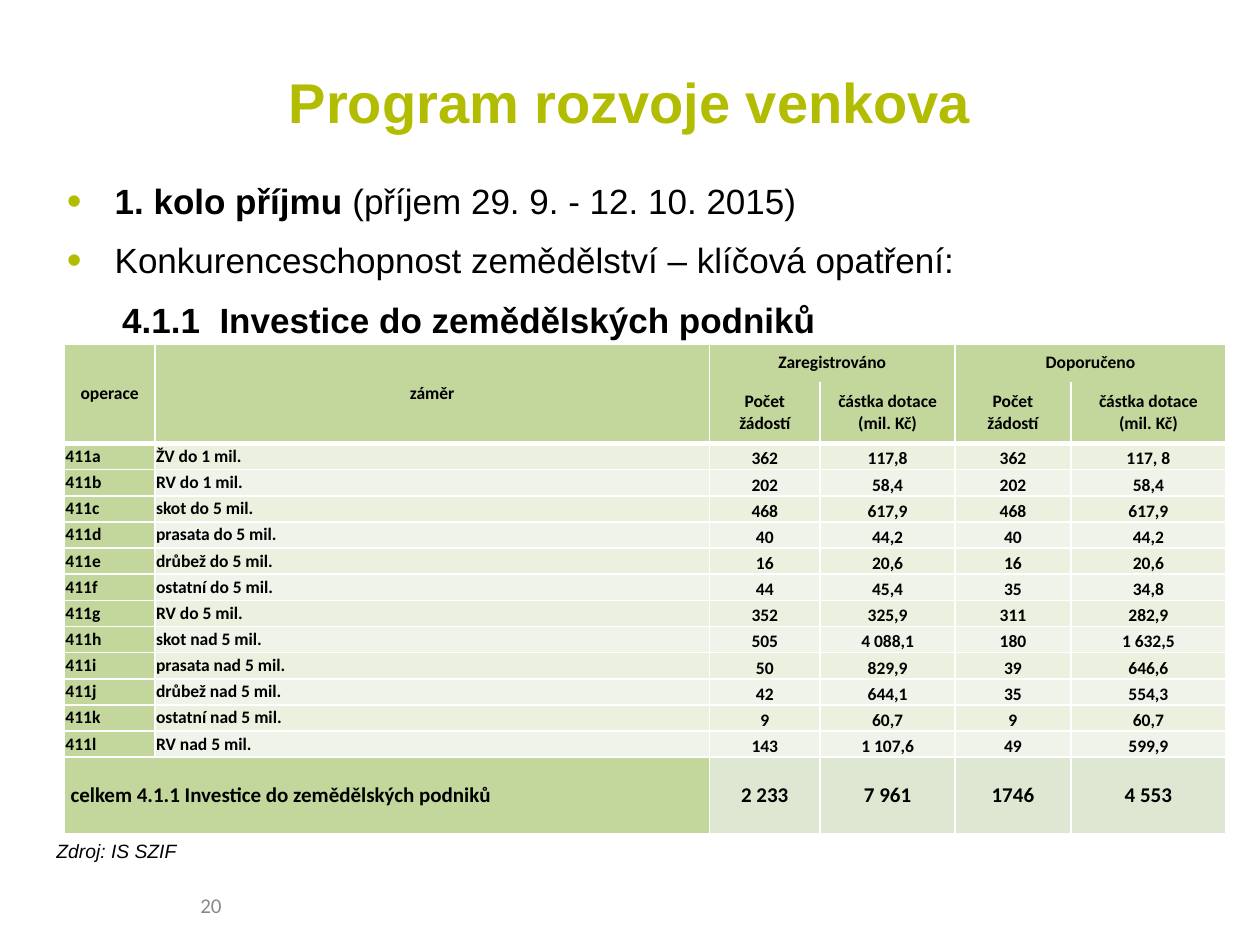
"""Build the slide on round 1 of the rural development programme."""
from dataclasses import dataclass

from lxml import etree
from pptx import Presentation
from pptx.dml.color import RGBColor
from pptx.enum.text import MSO_ANCHOR, MSO_AUTO_SIZE, PP_ALIGN
from pptx.oxml.ns import qn
from pptx.util import Inches, Pt

CENTER, LEFT, JUSTIFY = PP_ALIGN.CENTER, PP_ALIGN.LEFT, PP_ALIGN.JUSTIFY
MIDDLE, BOTTOM = MSO_ANCHOR.MIDDLE, MSO_ANCHOR.BOTTOM
NO_FIT = MSO_AUTO_SIZE.NONE


@dataclass(frozen=True)
class Theme:
    accent: str = "B2BC00"
    text: str = "000000"
    muted: str = "898989"
    border: str = "FFFFFF"
    head: str = "C3D69B"
    odd: str = "EBF1DE"
    even: str = "EFF3EA"
    total: str = "DEE7D1"
    text_font: str = "Arial"
    table_font: str = "Calibri"
    title_size: int = 32
    body_size: int = 20
    total_size: int = 12
    number_size: int = 12
    source_size: int = 11
    cell_size: int = 10


theme = Theme()


def add_run(p, text, size, font=theme.text_font, color=theme.text, bold=False, italic=False):
    r = p.add_run()
    r.text = text
    r.font.size = Pt(size)
    r.font.name = font
    r.font.color.rgb = RGBColor.from_string(color)
    r.font.bold = bold
    r.font.italic = italic


def add_borders(cell, top, bottom):
    tc_pr = cell._tc.get_or_add_tcPr()
    for side, width in (("L", 1), ("R", 1), ("T", top), ("B", bottom)):
        ln = etree.SubElement(tc_pr, qn(f"a:ln{side}"), w=str(Pt(width)))
        if width:
            fill = etree.SubElement(ln, qn("a:solidFill"))
            etree.SubElement(fill, qn("a:srgbClr"), val=theme.border)
        else:
            etree.SubElement(ln, qn("a:noFill"))


prs = Presentation()
prs.slide_width, prs.slide_height = Inches(10), Inches(7.5)
s = prs.slides.add_slide(prs.slide_layouts[1])

title = s.shapes.title
title.left, title.top, title.width, title.height = (Inches(v) for v in (0.5, 0.3, 9, 1.01))
tf = title.text_frame
tf.auto_size = NO_FIT
tf.vertical_anchor = MIDDLE
p = tf.paragraphs[0]
p.alignment = CENTER
add_run(p, "Program rozvoje venkova", theme.title_size, color=theme.accent, bold=True)

body = s.placeholders[1]
body.left, body.top, body.width, body.height = (Inches(v) for v in (0.43, 1.31, 9.21, 5.9))
tf = body.text_frame
tf.auto_size = NO_FIT
points = [
    (0, [("1. kolo příjmu ", True), ("(příjem 29. 9. - 12. 10. 2015)", False)]),
    (0, [("Konkurenceschopnost zemědělství – klíčová opatření:", False)]),
    (1, [("4.1.1  Investice do zemědělských podniků", True)]),
]
for i, (level, runs) in enumerate(points):
    p = tf.add_paragraph() if i else tf.paragraphs[0]
    p.level = level
    p_pr = p._p.get_or_add_pPr()
    if level:
        p_pr.set("marL", str(Inches(0.44)))
        p_pr.set("indent", "0")
        etree.SubElement(p_pr, qn("a:buNone"))
    else:
        p_pr.set("marL", str(Inches(0.38)))
        p_pr.set("indent", str(Inches(-0.38)))
        bu_clr = etree.SubElement(p_pr, qn("a:buClr"))
        etree.SubElement(bu_clr, qn("a:srgbClr"), val=theme.accent)
        etree.SubElement(p_pr, qn("a:buSzPct"), val="120000")
        etree.SubElement(p_pr, qn("a:buFont"), typeface=theme.text_font)
        etree.SubElement(p_pr, qn("a:buChar"), char="•")
    p.line_spacing = 1.2
    p.space_before = Pt(5 if i else 0)
    for text, bold in runs:
        add_run(p, text, theme.body_size, bold=bold)

count_head, amount_head = "Počet\nžádostí", "částka dotace\n(mil. Kč)"
rows = [
    ("operace", "záměr", "Zaregistrováno", "", "Doporučeno", ""),
    ("", "", count_head, amount_head, count_head, amount_head),
    ("411a", "ŽV do 1 mil.", "362", "117,8", "362", "117, 8"),
    ("411b", "RV do 1 mil.", "202", "58,4", "202", "58,4"),
    ("411c", "skot do 5 mil.", "468", "617,9", "468", "617,9"),
    ("411d", "prasata do 5 mil.", "40", "44,2", "40", "44,2"),
    ("411e", "drůbež do 5 mil.", "16", "20,6", "16", "20,6"),
    ("411f", "ostatní do 5 mil.", "44", "45,4", "35", "34,8"),
    ("411g", "RV do 5 mil.", "352", "325,9", "311", "282,9"),
    ("411h", "skot nad 5 mil.", "505", "4 088,1", "180", "1 632,5"),
    ("411i", "prasata nad 5 mil.", "50", "829,9", "39", "646,6"),
    ("411j", "drůbež nad 5 mil.", "42", "644,1", "35", "554,3"),
    ("411k", "ostatní nad 5 mil.", "9", "60,7", "9", "60,7"),
    ("411l", "RV nad 5 mil.", "143", "1 107,6", "49", "599,9"),
    ("celkem 4.1.1 Investice do zemědělských podniků", "", "2 233", "7 961", "1746", "4 553"),
]
last = len(rows) - 1
table_height, head_height, subhead_height, total_height = 3.89, 0.3, 0.49, 0.61
row_height = (table_height - head_height - subhead_height - total_height) / (last - 2)
heights = [head_height, subhead_height] + [row_height] * (last - 2) + [total_height]

table = s.shapes.add_table(len(rows), 6, Inches(0.51), Inches(2.73), Inches(9.21),
                           Inches(table_height)).table
table.first_row = table.horz_banding = False
for col, width in zip(table.columns, (0.72, 4.4, 0.88, 1.07, 0.92, 1.23)):
    col.width = Inches(width)
for row, height in zip(table.rows, heights):
    row.height = Inches(height)
for first, end in (((0, 0), (1, 0)), ((0, 1), (1, 1)), ((0, 2), (0, 3)),
                   ((0, 4), (0, 5)), ((last, 0), (last, 1))):
    table.cell(*first).merge(table.cell(*end))

for i, values in enumerate(rows):
    is_head, is_total = i < 2, i == last
    for j, value in enumerate(values):
        cell = table.cell(i, j)
        label = j < 2
        top = {1: 0, 2: 3}.get(i, 1)
        bottom = {0: 3 if label else 0, 1: 3}.get(i, 1)
        add_borders(cell, top, bottom)
        if is_head or j == 0 or (is_total and label):
            color = theme.head
        elif is_total:
            color = theme.total
        else:
            color = theme.even if i % 2 else theme.odd
        cell.fill.solid()
        cell.fill.fore_color.rgb = RGBColor.from_string(color)
        cell.margin_left = cell.margin_right = Inches(0.05 if is_total and label else 0.01)
        cell.margin_top = cell.margin_bottom = 0
        cell.vertical_anchor = MIDDLE if is_head or is_total or label else BOTTOM
        if not value:
            continue
        tf = cell.text_frame
        for k, line in enumerate(value.split("\n")):
            p = tf.add_paragraph() if k else tf.paragraphs[0]
            if is_head or not label:
                p.alignment = CENTER
            else:
                p.alignment = JUSTIFY if is_total else LEFT
            add_run(p, line, theme.total_size if is_total else theme.cell_size,
                    font=theme.table_font, bold=True)

source = s.shapes.add_textbox(Inches(0.35), Inches(6.61), Inches(1.26), Inches(0.29))
tf = source.text_frame
tf.word_wrap = True
add_run(tf.paragraphs[0], "Zdroj: IS SZIF", theme.source_size, italic=True)

number = s.shapes.add_textbox(Inches(0.51), Inches(6.98), Inches(2.33), Inches(0.4))
tf = number.text_frame
tf.word_wrap = True
tf.vertical_anchor = MIDDLE
p = tf.paragraphs[0]
p.alignment = CENTER
add_run(p, "20", theme.number_size, font=theme.table_font, color=theme.muted)

prs.save("out.pptx")
